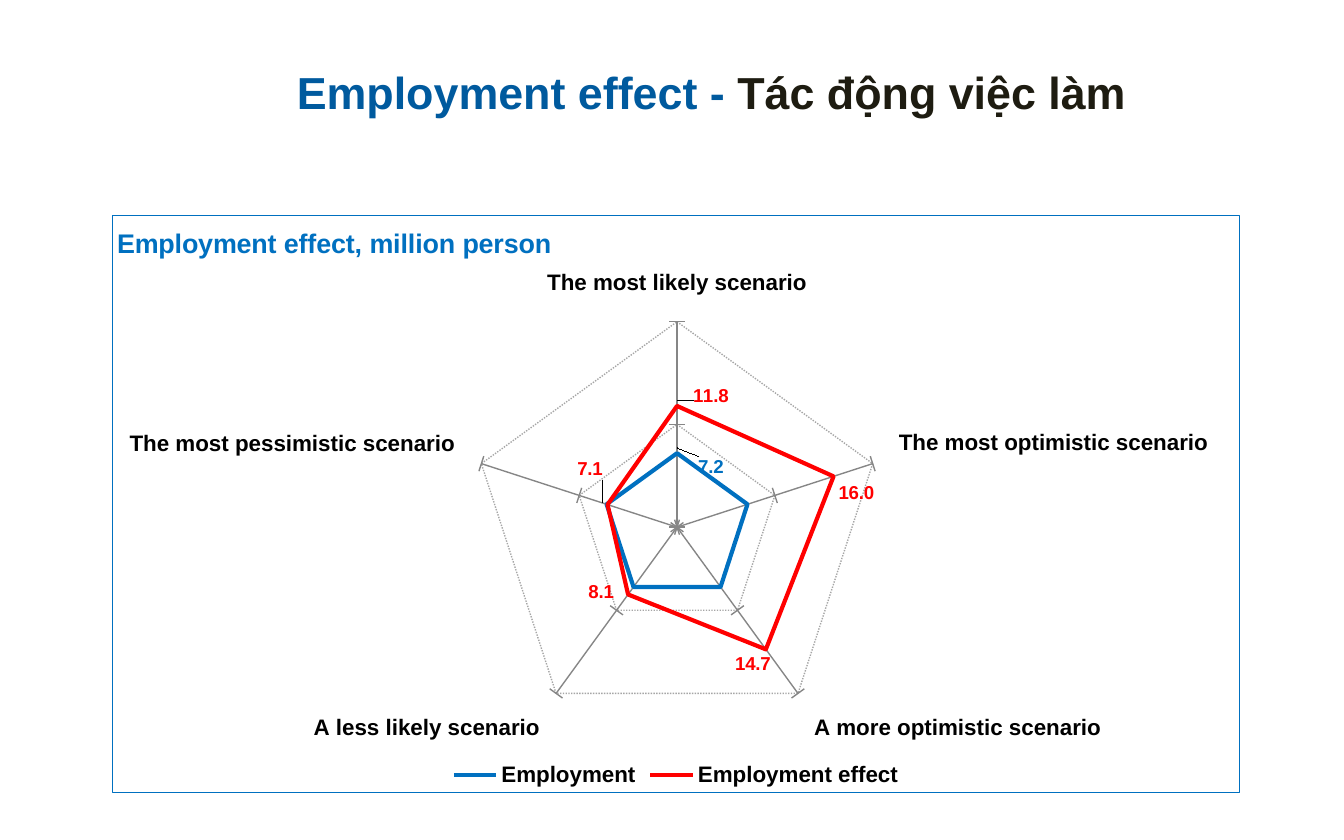
from dataclasses import dataclass

from lxml.etree import SubElement
from pptx import Presentation
from pptx.chart.chart import Chart
from pptx.chart.data import CategoryChartData
from pptx.dml.color import RGBColor
from pptx.enum.chart import XL_CHART_TYPE, XL_LEGEND_POSITION, XL_TICK_LABEL_POSITION, XL_TICK_MARK
from pptx.enum.dml import MSO_LINE
from pptx.enum.text import MSO_AUTO_SIZE
from pptx.oxml import parse_xml
from pptx.oxml.ns import nsdecls, qn
from pptx.util import Emu, Pt


@dataclass(frozen=True)
class Theme:
    font: str = "Arial"
    heading: str = "005A9E"
    dark: str = "1E1C11"
    blue: str = "0070C0"
    red: str = "FF0000"
    black: str = "000000"
    axis: str = "868686"
    grid: str = "A6A6A6"
    heading_size: float = 24
    title_size: float = 14.4
    chart_size: float = 12
    label_size: float = 10
    hairline: float = 0.75
    series_line: float = 2.25


@dataclass(frozen=True)
class Label:
    point: int
    dx: float
    dy: float


@dataclass(frozen=True)
class RadarSeries:
    name: str
    values: tuple[float, ...]
    color: str
    labels: tuple[Label, ...]


THEME = Theme()
EMU_PER_PX = 9144
NUMBER_FORMAT = "0.0"
SCENARIOS = (
    "The most likely scenario",
    "The most optimistic scenario",
    "A more optimistic scenario",
    "A less likely scenario",
    "The most pessimistic scenario",
)
SERIES = (
    RadarSeries("Employment", (7.2,) * len(SCENARIOS), THEME.blue, (Label(0, 0.03, 0.06),)),
    RadarSeries(
        "Employment effect",
        (11.8, 16.0, 14.7, 8.1, 7.1),
        THEME.red,
        (
            Label(0, 0.03, 0.02),
            Label(1, 0, 0.05),
            Label(2, -0.03, 0),
            Label(3, -0.01, -0.03),
            Label(4, 0, -0.04),
        ),
    ),
)


def px(n: int) -> Emu:
    return Emu(n * EMU_PER_PX)


def style_font(font, *, size: float, color: str, bold: bool = True) -> None:
    font.name = THEME.font
    font.size = Pt(size)
    font.bold = bold
    font.color.rgb = RGBColor.from_string(color)


def add_run(p, text: str, *, size: float, color: str, bold: bool = True) -> None:
    r = p.add_run()
    r.text = text
    style_font(r.font, size=size, color=color, bold=bold)


def style_line(line, color: str, width: float) -> None:
    line.color.rgb = RGBColor.from_string(color)
    line.width = Pt(width)


def make_layout(**values):
    layout = parse_xml(f"<c:layout {nsdecls('c')}/>")
    manual = SubElement(layout, qn("c:manualLayout"))
    for tag, value in values.items():
        SubElement(manual, qn(f"c:{tag}")).set("val", str(value))
    return layout


def set_layout(parent, **values) -> None:
    layout = make_layout(**values)
    old = parent.find(qn("c:layout"))
    if old is None:
        parent.insert(0, layout)
    else:
        parent.replace(old, layout)


def add_border(chart: Chart) -> None:
    border = parse_xml(
        f"<c:spPr {nsdecls('c', 'a')}><a:noFill/><a:ln w=\"{Pt(THEME.hairline)}\">"
        f"<a:solidFill><a:srgbClr val=\"{THEME.blue}\"/></a:solidFill></a:ln></c:spPr>"
    )
    chart.element.find(qn("c:chart")).addnext(border)


def style_title(chart: Chart) -> None:
    chart.has_title = True
    title = chart.chart_title
    p = title.text_frame.paragraphs[0]
    add_run(p, "Employment effect, million person", size=THEME.title_size, color=THEME.blue)
    el = title.element if hasattr(title, "element") else title._element
    set_layout(el, xMode="edge", yMode="edge", x=0.0, y=0.01)
    el.find(qn("c:overlay")).set("val", "1")


def style_axes(chart: Chart) -> None:
    scenarios, values = chart.category_axis, chart.value_axis
    scenarios.major_tick_mark = XL_TICK_MARK.OUTSIDE
    values.minimum_scale, values.maximum_scale, values.major_unit = 0, 20, 10
    values.major_tick_mark = XL_TICK_MARK.CROSS
    values.tick_label_position = XL_TICK_LABEL_POSITION.NONE
    values.has_major_gridlines = True
    grid = values.major_gridlines.format.line
    style_line(grid, THEME.grid, THEME.hairline)
    grid.dash_style = MSO_LINE.ROUND_DOT
    for axis in (scenarios, values):
        style_line(axis.format.line, THEME.axis, THEME.hairline)


def style_series(ser, item: RadarSeries) -> None:
    ser.smooth = False
    style_line(ser.format.line, item.color, THEME.series_line)
    labels = ser.data_labels
    labels.show_value = len(item.labels) == len(item.values)
    labels.number_format = NUMBER_FORMAT
    labels.number_format_is_linked = False
    style_font(labels.font, size=THEME.label_size, color=item.color)
    for label in item.labels:
        font = ser.points[label.point].data_label.font
        style_font(font, size=THEME.label_size, color=item.color)
    for label, el in zip(item.labels, ser._element.iter(qn("c:dLbl"))):
        layout = make_layout(x=label.dx, y=label.dy)
        el.find(qn("c:idx")).addnext(layout)
        layout.addnext(
            parse_xml(f"<c:numFmt {nsdecls('c')} formatCode=\"{NUMBER_FORMAT}\" sourceLinked=\"0\"/>")
        )


def add_radar(slide, x: int, y: int, w: int, h: int) -> None:
    data = CategoryChartData(number_format=NUMBER_FORMAT)
    data.categories = SCENARIOS
    for item in SERIES:
        data.add_series(item.name, item.values)
    frame = slide.shapes.add_chart(XL_CHART_TYPE.RADAR, px(x), px(y), px(w), px(h), data)
    chart = frame.chart
    style_font(chart.font, size=THEME.chart_size, color=THEME.black)
    add_border(chart)
    style_title(chart)
    style_axes(chart)
    chart.has_legend = True
    chart.legend.position = XL_LEGEND_POSITION.BOTTOM
    chart.legend.include_in_layout = False
    chart.plots[0].vary_by_categories = False
    for ser, item in zip(chart.plots[0].series, SERIES):
        style_series(ser, item)
    set_layout(
        chart.element.find(".//" + qn("c:plotArea")),
        layoutTarget="inner", xMode="edge", yMode="edge", x=0.29, y=0.184, w=0.422, h=0.713,
    )


def add_heading(slide, x: int, y: int, w: int, h: int) -> None:
    tf = slide.shapes.add_textbox(px(x), px(y), px(w), px(h)).text_frame
    tf.word_wrap = False
    tf.auto_size = MSO_AUTO_SIZE.SHAPE_TO_FIT_TEXT
    p = tf.paragraphs[0]
    add_run(p, "Employment effect - ", size=THEME.heading_size, color=THEME.heading)
    add_run(p, "Tác động việc làm", size=THEME.heading_size, color=THEME.dark)


def main() -> None:
    prs = Presentation()
    prs.slide_width, prs.slide_height = px(1000), px(625)
    slide = prs.slides.add_slide(prs.slide_layouts[6])
    add_radar(slide, 83, 160, 840, 430)
    add_heading(slide, 211, 43, 652, 50)
    prs.save("out.pptx")


if __name__ == "__main__":
    main()
